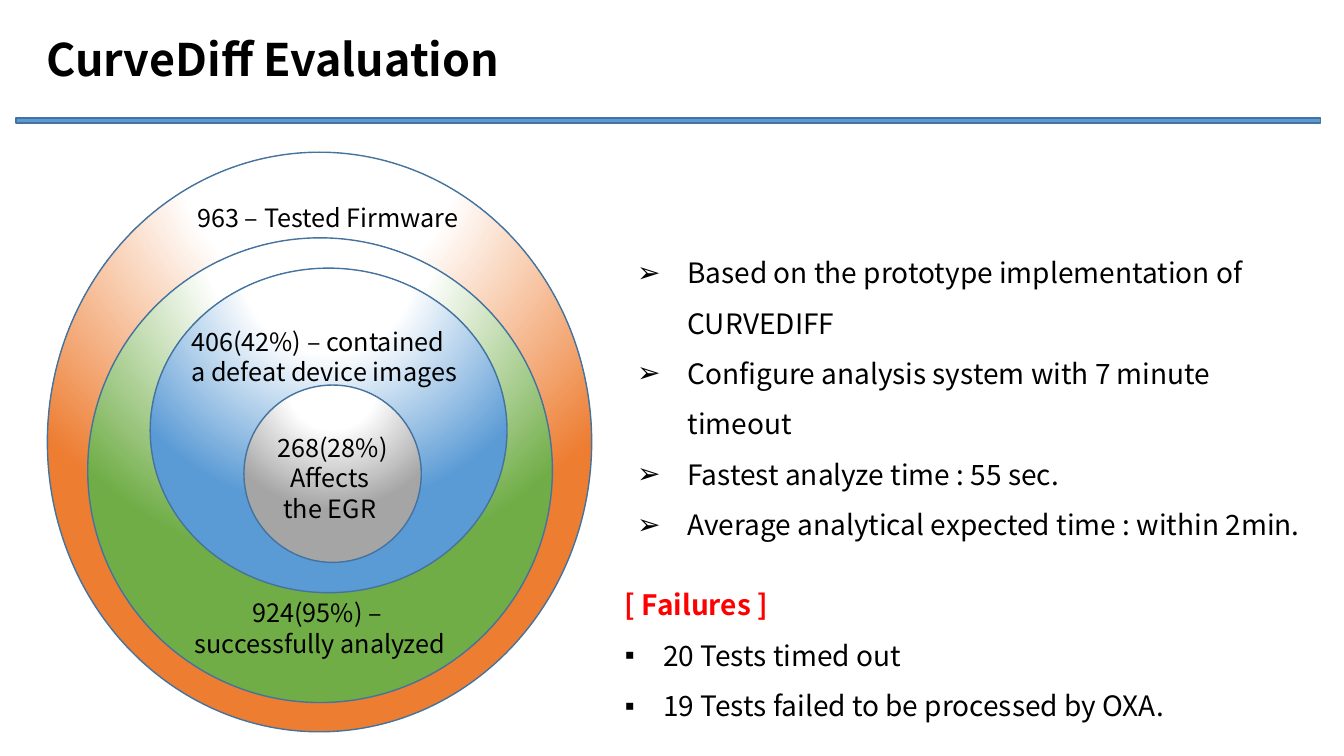
"""Build the CurveDiff evaluation slide with nested rings and two lists."""
import pptx
import pptx.util
import pptx.dml.color
import pptx.enum.shapes
import pptx.enum.text
import pptx.oxml
import pptx.oxml.ns

THEME = {
    "font": "Noto Sans CJK KR", "title": 32, "body": 20, "label": 18,
    "ink": "000000", "alert": "FF0000", "bar": "5B9BD5", "edge": "43739E",
    "all": "ED7D31", "done": "70AD47", "defeat": "5B9BD5", "egr": "A5A5A5",
}
CELL = 0.1
NS = pptx.oxml.ns.nsdecls("a")
RGB = pptx.dml.color.RGBColor.from_string
ALIGN = pptx.enum.text.PP_ALIGN
ANCHOR = pptx.enum.text.MSO_ANCHOR
SHAPE = pptx.enum.shapes.MSO_SHAPE


def grid(*cells):
    return [pptx.util.Inches(cell * CELL) for cell in cells]


def write(box, text, size, align=ALIGN.LEFT, anchor=ANCHOR.MIDDLE, lead=1.0):
    frame = box.text_frame
    frame.text = text
    frame.word_wrap = True
    frame.auto_size = pptx.enum.text.MSO_AUTO_SIZE.NONE
    frame.vertical_anchor = anchor
    for par in frame.paragraphs:
        par.alignment = align
        par.line_spacing = lead
        par.space_before = pptx.util.Pt(0)
        for run in par.runs:
            run.font.name = THEME["font"]
            run.font.size = pptx.util.Pt(THEME[size])
            run.font.color.rgb = RGB(THEME["ink"])
    return frame.paragraphs


deck = pptx.Presentation()
deck.slide_width, deck.slide_height = grid(133.33, 75)
slide = deck.slides.add_slide(deck.slide_layouts[3])
shapes = slide.shapes
title, facts, fails = slide.placeholders

title.left, title.top, title.width, title.height = grid(3.6, 0.1, 125.2, 11.5)
head = write(title, "CurveDiff Evaluation", "title")[0]
head.runs[0].font.bold = True

bar = shapes.add_shape(SHAPE.RECTANGLE, *grid(1.6, 11.7, 129.4, 0.5))
bar.fill.solid()
bar.fill.fore_color.rgb = RGB(THEME["bar"])

rings = [
    ("all", (4.7, 15.1, 54, 57.5)),
    ("done", (8.7, 23.6, 46.1, 46.1)),
    ("defeat", (14.9, 26.6, 35.4, 32.2)),
    ("egr", (24.2, 38.2, 17.6, 17.6)),
]
edged = [bar]
for hue, area in rings:
    ring = shapes.add_shape(SHAPE.OVAL, *grid(*area))
    ring.fill.background()
    blank = ring._element.spPr.find(pptx.oxml.ns.qn("a:noFill"))
    stops = "".join(
        f'<a:gs pos="{share * 1000}"><a:srgbClr val="{tint}"/></a:gs>'
        for share, tint in [(0, "FFFFFF"), (35, "FFFFFF"), (100, THEME[hue])])
    blank.getparent().replace(blank, pptx.oxml.parse_xml(
        f'<a:gradFill {NS} rotWithShape="1"><a:gsLst>{stops}</a:gsLst>'
        '<a:path path="circle"><a:fillToRect l="50000" t="-80000" '
        'r="50000" b="180000"/></a:path></a:gradFill>'))
    edged.append(ring)

for shape in edged:
    shape.shadow.inherit = False
    shape.line.color.rgb = RGB(THEME["edge"])
    shape.line.width = pptx.util.Pt(1)

labels = [
    ("963 – Tested Firmware", (18.6, 19.6, 29, 4), ALIGN.LEFT),
    ("924(95%) – \nsuccessfully analyzed", (16.3, 58.8, 30.9, 7.1), ALIGN.CENTER),
    ("406(42%) – contained\na defeat device images", (18, 31.9, 30.1, 7.1), ALIGN.LEFT),
    ("268(28%) Affects \nthe EGR ", (24.2, 42.4, 17.6, 10.1), ALIGN.CENTER),
]
for text, area, align in labels:
    write(shapes.add_textbox(*grid(*area)), text, "label", align, ANCHOR.TOP)

lists = [
    (facts, (62.2, 23.1, 69.1, 31.2), "➢", 0.5, [
        "Based on the prototype implementation of CURVEDIFF",
        "Configure analysis system with 7 minute timeout",
        "Fastest analyze time : 55 sec.",
        "Average analytical expected time : within 2min."]),
    (fails, (61, 55.8, 69.1, 16.7), "▪", 0.38, [
        "[ Failures ]",
        "20 Tests timed out",
        "19 Tests failed to be processed by OXA."]),
]
for box, area, mark, hang, lines in lists:
    box.left, box.top, box.width, box.height = grid(*area)
    for par in write(box, "\n".join(lines), "body", lead=1.5):
        plain = par.text.startswith("[")
        indent = 0 if plain else pptx.util.Inches(hang)
        props = par._p.get_or_add_pPr()
        props.set("marL", str(indent))
        props.set("indent", str(-indent))
        if plain:
            props.append(pptx.oxml.parse_xml(f"<a:buNone {NS}/>"))
            par.runs[0].font.bold = True
            par.runs[0].font.color.rgb = RGB(THEME["alert"])
        else:
            props.append(pptx.oxml.parse_xml(f'<a:buFont {NS} typeface="Arial"/>'))
            props.append(pptx.oxml.parse_xml(f'<a:buChar {NS} char="{mark}"/>'))

deck.save("out.pptx")
